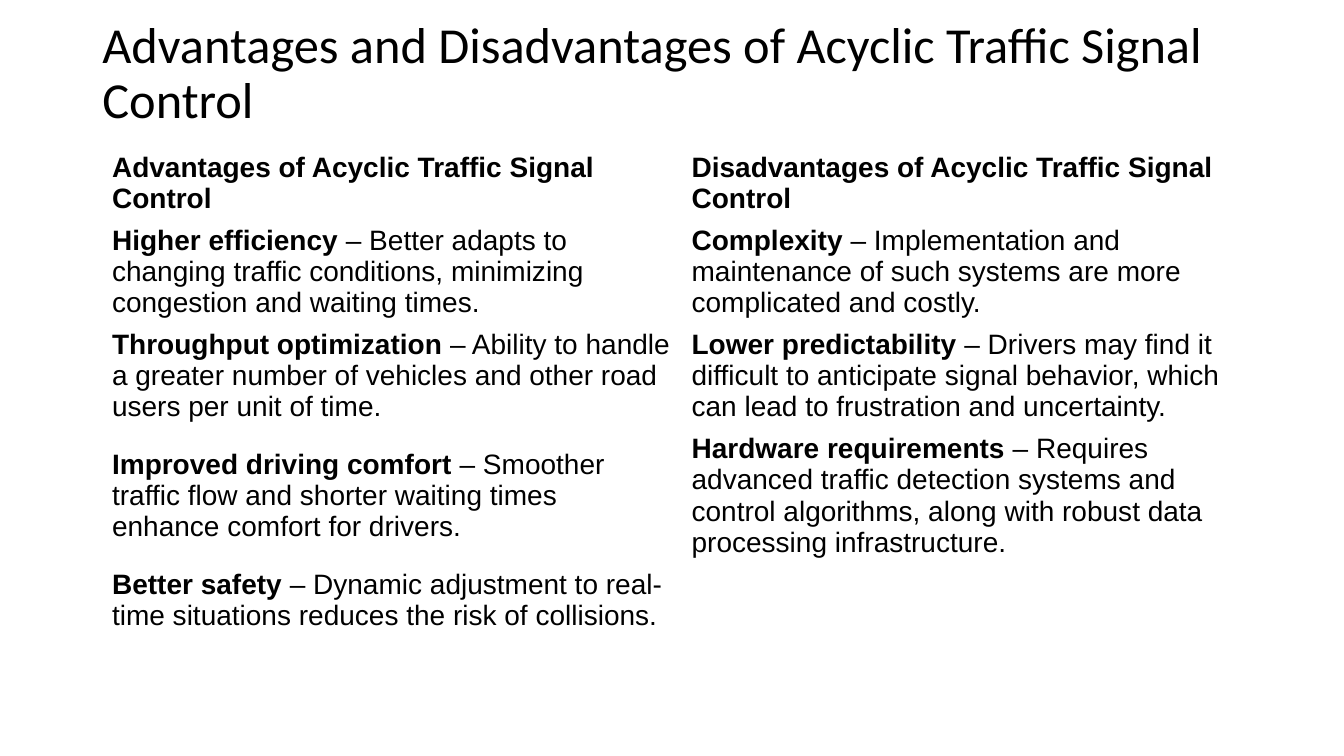
from pptx import Presentation
from pptx.dml.color import RGBColor
from pptx.enum.text import MSO_ANCHOR
from pptx.util import Cm, Pt

BLACK = "000000"
TITLE = "Advantages and Disadvantages of Acyclic Traffic Signal Control"

# Each cell: bold lead, then regular remainder
ROWS = [
    [("Advantages of Acyclic Traffic Signal Control", ""),
     ("Disadvantages of Acyclic Traffic Signal Control", "")],
    [("Higher efficiency",
      " – Better adapts to changing traffic conditions, minimizing congestion and waiting times."),
     ("Complexity",
      " – Implementation and maintenance of such systems are more complicated and costly.")],
    [("Throughput optimization",
      " – Ability to handle a greater number of vehicles and other road users per unit of time."),
     ("Lower predictability",
      " – Drivers may find it difficult to anticipate signal behavior, which can lead to "
      "frustration and uncertainty.")],
    [("Improved driving comfort",
      " – Smoother traffic flow and shorter waiting times enhance comfort for drivers."),
     ("Hardware requirements",
      " – Requires advanced traffic detection systems and control algorithms, along with "
      "robust data processing infrastructure.")],
    [("Better safety",
      " – Dynamic adjustment to real-time situations reduces the risk of collisions."),
     ("", "")],
]
ROW_LINES = [2, 3, 3, 4, 2]
LINE_HEIGHT = 0.79
ROW_PADDING = 0.25
TABLE_WIDTH = 29.21


def color(value):
    return RGBColor.from_string(value)


def add_span(para, text, *, size=20, font="Arial", bold=False, fill=BLACK):
    span = para.add_run()
    span.text = text
    span.font.size = Pt(size)
    span.font.name = font
    span.font.bold = bold
    span.font.color.rgb = color(fill)


def add_title(page, text):
    box = page.shapes.add_textbox(Cm(2.33), Cm(0.04), Cm(29.21), Cm(3.68))
    frame = box.text_frame
    frame.word_wrap = True
    frame.vertical_anchor = MSO_ANCHOR.MIDDLE
    para = frame.paragraphs[0]
    para.line_spacing = 0.9
    add_span(para, text, size=36, font="Calibri")


def fill_cell(cell, lead, rest):
    cell.fill.background()
    cell.vertical_anchor = MSO_ANCHOR.MIDDLE
    cell.margin_top = cell.margin_bottom = Cm(0.02)
    para = cell.text_frame.paragraphs[0]
    para.font.size = Pt(20)
    if lead:
        add_span(para, lead, bold=True)
    if rest:
        add_span(para, rest)


def add_comparison(page, rows):
    heights = [lines * LINE_HEIGHT + ROW_PADDING for lines in ROW_LINES]
    table = page.shapes.add_table(len(rows), 2, Cm(2.57), Cm(3.71),
                                  Cm(TABLE_WIDTH), Cm(sum(heights))).table
    table.first_row = False
    table.horz_banding = False
    for row, height, entries in zip(table.rows, heights, rows):
        row.height = Cm(height)
        for cell, (lead, rest) in zip(row.cells, entries):
            fill_cell(cell, lead, rest)


def main():
    deck = Presentation()
    deck.slide_width, deck.slide_height = Cm(33.87), Cm(19.05)
    page = deck.slides.add_slide(deck.slide_layouts[6])

    # Heading
    add_title(page, TITLE)

    # Two-column comparison
    add_comparison(page, ROWS)

    deck.save("out.pptx")


if __name__ == "__main__":
    main()
